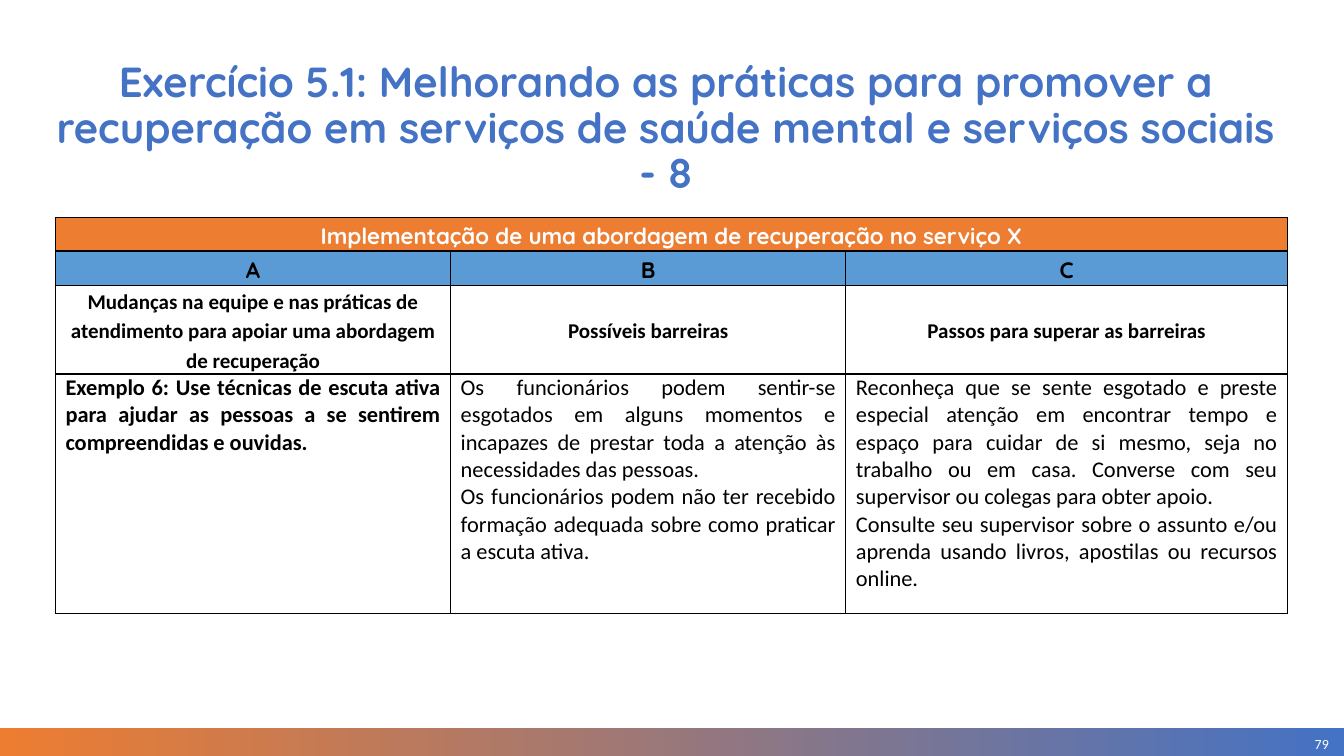
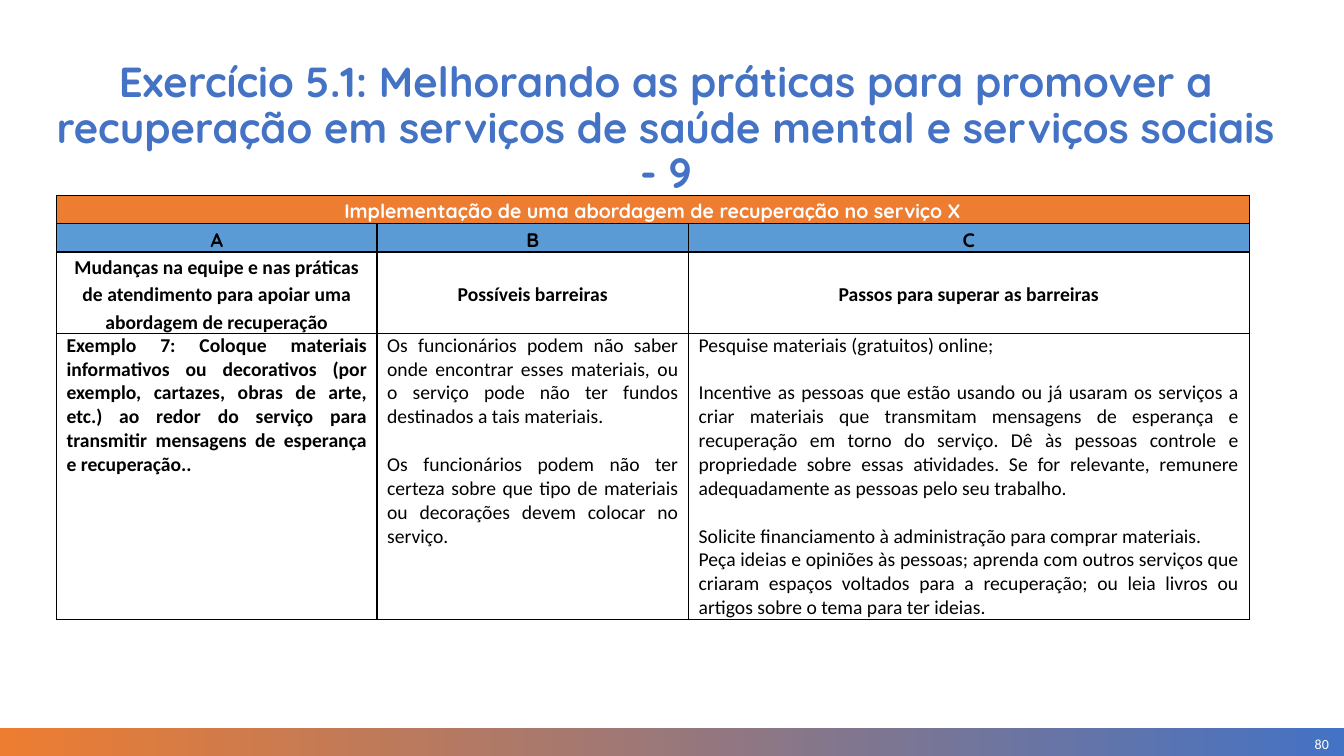
from dataclasses import dataclass

from lxml import etree
from pptx import Presentation
from pptx.dml.color import RGBColor
from pptx.enum.shapes import MSO_SHAPE
from pptx.enum.text import MSO_ANCHOR, MSO_AUTO_SIZE, PP_ALIGN
from pptx.oxml.ns import qn
from pptx.util import Inches, Pt

RECTANGLE = MSO_SHAPE.RECTANGLE
TOP, MIDDLE = MSO_ANCHOR.TOP, MSO_ANCHOR.MIDDLE
CENTER, RIGHT, JUSTIFY = PP_ALIGN.CENTER, PP_ALIGN.RIGHT, PP_ALIGN.JUSTIFY
NO_AUTOFIT = MSO_AUTO_SIZE.NONE
TITLE_ONLY = 5
SLIDE_WIDTH, SLIDE_HEIGHT = 13.33, 7.5
BAND_HEIGHT = 0.28


@dataclass(frozen=True)
class Theme:
    orange: RGBColor = RGBColor(0xED, 0x7D, 0x31)
    blue: RGBColor = RGBColor(0x44, 0x72, 0xC4)
    light_blue: RGBColor = RGBColor(0x5B, 0x9B, 0xD5)
    white: RGBColor = RGBColor(0xFF, 0xFF, 0xFF)
    black: RGBColor = RGBColor(0, 0, 0)
    heading_font: str = "Quicksand"
    body_font: str = "Calibri"
    title_size: float = 30
    number_size: float = 10


THEME = Theme()


@dataclass(frozen=True)
class TextStyle:
    font: str
    size: float
    color: RGBColor
    bold: bool = False
    align: PP_ALIGN = CENTER
    line_spacing: float = 1.0


@dataclass(frozen=True)
class CellStyle:
    text: TextStyle
    anchor: MSO_ANCHOR = MIDDLE
    fill: RGBColor | None = None
    margin: float = 0.1


@dataclass(frozen=True)
class Item:
    """A paragraph of an answer, with the space above it in points."""
    text: str
    space_before: float = 0


@dataclass(frozen=True)
class Exercise:
    title_number: int
    page_number: int
    left: float
    top: float
    columns: tuple[float, ...]
    rows: tuple[float, ...]
    banner_size: float
    label_size: float
    body_size: float
    example: str
    barriers: tuple[Item, ...]
    steps: tuple[Item, ...]


TITLE = ("Exercício 5.1: Melhorando as práticas para promover a recuperação "
         "em serviços de saúde mental e serviços sociais - {}")
BANNER = "Implementação de uma abordagem de recuperação no serviço X"
LETTERS = ("A", "B", "C")
LABELS = (
    "Mudanças na equipe e nas práticas de atendimento para apoiar uma "
    "abordagem de recuperação",
    "Possíveis barreiras",
    "Passos para superar as barreiras",
)
GAP = 17

EXERCISES = (
    Exercise(
        title_number=8, page_number=79, left=0.55, top=2.16,
        columns=(3.92, 3.92, 4.38), rows=(0.33, 0.34, 0.88, 2.38),
        banner_size=16, label_size=15, body_size=16,
        example="Exemplo 6: Use técnicas de escuta ativa para ajudar as "
                "pessoas a se sentirem compreendidas e ouvidas.",
        barriers=(
            Item("Os funcionários podem sentir-se esgotados em alguns momentos "
                 "e incapazes de prestar toda a atenção às necessidades das "
                 "pessoas."),
            Item("Os funcionários podem não ter recebido formação adequada "
                 "sobre como praticar a escuta ativa."),
        ),
        steps=(
            Item("Reconheça que se sente esgotado e preste especial atenção em "
                 "encontrar tempo e espaço para cuidar de si mesmo, seja no "
                 "trabalho ou em casa. Converse com seu supervisor ou colegas "
                 "para obter apoio."),
            Item("Consulte seu supervisor sobre o assunto e/ou aprenda usando "
                 "livros, apostilas ou recursos online."),
        ),
    ),
    Exercise(
        title_number=9, page_number=80, left=0.56, top=1.94,
        columns=(3.18, 3.09, 5.56), rows=(0.28, 0.28, 0.81, 2.84),
        banner_size=14, label_size=14, body_size=14,
        example="Exemplo 7: Coloque materiais informativos ou decorativos (por "
                "exemplo, cartazes, obras de arte, etc.) ao redor do serviço "
                "para transmitir mensagens de esperança e recuperação..",
        barriers=(
            Item("Os funcionários podem não saber onde encontrar esses "
                 "materiais, ou o serviço pode não ter fundos destinados a "
                 "tais materiais."),
            Item("Os funcionários podem não ter certeza sobre que tipo de "
                 "materiais ou decorações devem colocar no serviço.", GAP),
        ),
        steps=(
            Item("Pesquise materiais (gratuitos) online;"),
            Item("Incentive as pessoas que estão usando ou já usaram os "
                 "serviços a criar materiais que transmitam mensagens de "
                 "esperança e recuperação em torno do serviço. Dê às pessoas "
                 "controle e propriedade sobre essas atividades. Se for "
                 "relevante, remunere adequadamente as pessoas pelo seu "
                 "trabalho.", GAP),
            Item("Solicite financiamento à administração para comprar "
                 "materiais.", GAP),
            Item("Peça ideias e opiniões às pessoas; aprenda com outros "
                 "serviços que criaram espaços voltados para a recuperação; ou "
                 "leia livros ou artigos sobre o tema para ter ideias."),
        ),
    ),
)


def write_text(frame, items: tuple[Item, ...], style: TextStyle) -> None:
    for index, item in enumerate(items):
        paragraph = frame.paragraphs[0] if index == 0 else frame.add_paragraph()
        paragraph.text = item.text
        paragraph.alignment = style.align
        paragraph.line_spacing = style.line_spacing
        paragraph.space_before = Pt(item.space_before)
        paragraph.font.name = style.font
        paragraph.font.size = Pt(style.size)
        paragraph.font.bold = style.bold
        paragraph.font.color.rgb = style.color


def add_title(page, title_number: int) -> None:
    title = page.shapes.title
    title.left, title.top = Inches(0.43), Inches(0.56)
    title.width, title.height = Inches(12.35), Inches(0.47)
    frame = title.text_frame
    frame.word_wrap = True
    frame.auto_size = NO_AUTOFIT
    frame.vertical_anchor = TOP
    style = TextStyle(THEME.heading_font, THEME.title_size, THEME.blue,
                      bold=True, line_spacing=0.9)
    write_text(frame, (Item(TITLE.format(title_number)),), style)


def add_footer(page, page_number: int) -> None:
    band = page.shapes.add_shape(
        RECTANGLE, 0, Inches(SLIDE_HEIGHT - BAND_HEIGHT),
        Inches(SLIDE_WIDTH), Inches(BAND_HEIGHT))
    band.shadow.inherit = False
    band.line.fill.background()
    band.fill.gradient()
    band.fill.gradient_angle = 0
    for stop, position, color in zip(band.fill.gradient_stops, (0, 1),
                                     (THEME.orange, THEME.blue)):
        stop.position = position
        stop.color.rgb = color

    box = page.shapes.add_textbox(Inches(11.38), Inches(7.26),
                                  Inches(1.8), Inches(0.24))
    frame = box.text_frame
    frame.word_wrap = True
    frame.vertical_anchor = MIDDLE
    frame.margin_left = frame.margin_right = 0
    frame.margin_top = frame.margin_bottom = 0
    style = TextStyle(THEME.body_font, THEME.number_size, THEME.white,
                      align=RIGHT)
    write_text(frame, (Item(str(page_number)),), style)


def add_borders(cell) -> None:
    properties = cell._tc.get_or_add_tcPr()
    for side in ("a:lnL", "a:lnR", "a:lnT", "a:lnB"):
        line = etree.SubElement(properties, qn(side), w=str(Pt(1)))
        fill = etree.SubElement(line, qn("a:solidFill"))
        etree.SubElement(fill, qn("a:srgbClr"), val=str(THEME.black))


def fill_cell(cell, items: tuple[Item, ...], style: CellStyle) -> None:
    cell.margin_left = cell.margin_right = Inches(style.margin)
    cell.margin_top = cell.margin_bottom = 0
    cell.vertical_anchor = style.anchor
    if style.fill is None:
        cell.fill.background()
    else:
        cell.fill.solid()
        cell.fill.fore_color.rgb = style.fill
    write_text(cell.text_frame, items, style.text)


def add_exercise_table(page, exercise: Exercise) -> None:
    table = page.shapes.add_table(
        len(exercise.rows), len(exercise.columns),
        Inches(exercise.left), Inches(exercise.top),
        Inches(sum(exercise.columns)), Inches(sum(exercise.rows))).table
    table.first_row = table.horz_banding = False
    for column, width in zip(table.columns, exercise.columns):
        column.width = Inches(width)
    for row, height in zip(table.rows, exercise.rows):
        row.height = Inches(height)
    for cell in table.iter_cells():
        add_borders(cell)

    def heading(font: str, size: float, color: RGBColor) -> TextStyle:
        return TextStyle(font, size, color, bold=True, line_spacing=1.15)

    def answer(bold: bool) -> CellStyle:
        return CellStyle(TextStyle(THEME.body_font, exercise.body_size,
                                   THEME.black, bold, JUSTIFY), TOP)

    banner = CellStyle(heading(THEME.heading_font, exercise.banner_size,
                               THEME.white), fill=THEME.orange)
    letter_style = CellStyle(heading(THEME.heading_font, exercise.banner_size,
                                     THEME.black), fill=THEME.light_blue)
    label_style = CellStyle(heading(THEME.body_font, exercise.label_size,
                                    THEME.black), margin=0.09)

    table.cell(0, 0).merge(table.cell(0, len(exercise.columns) - 1))
    fill_cell(table.cell(0, 0), (Item(BANNER),), banner)
    answers = ((Item(exercise.example),), exercise.barriers, exercise.steps)
    for column, (letter, label, items) in enumerate(
            zip(LETTERS, LABELS, answers)):
        fill_cell(table.cell(1, column), (Item(letter),), letter_style)
        fill_cell(table.cell(2, column), (Item(label),), label_style)
        fill_cell(table.cell(3, column), items, answer(bold=column == 0))


def main() -> None:
    deck = Presentation()
    deck.slide_width = Inches(SLIDE_WIDTH)
    deck.slide_height = Inches(SLIDE_HEIGHT)
    for exercise in EXERCISES:
        page = deck.slides.add_slide(deck.slide_layouts[TITLE_ONLY])
        add_footer(page, exercise.page_number)
        add_exercise_table(page, exercise)
        add_title(page, exercise.title_number)
    deck.save("out.pptx")


if __name__ == "__main__":
    main()
